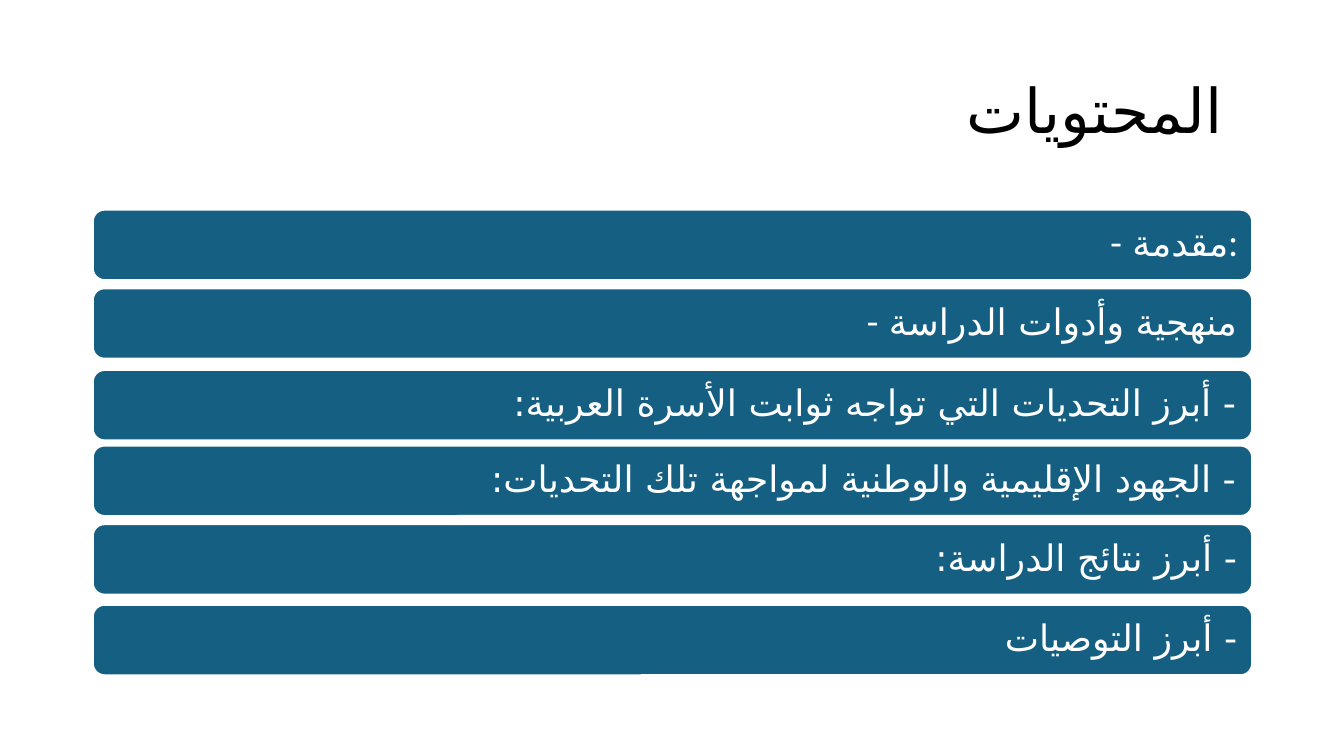
from pptx import Presentation
from pptx.dml.color import RGBColor
from pptx.enum.shapes import MSO_SHAPE
from pptx.enum.text import MSO_ANCHOR, PP_ALIGN
from pptx.oxml.ns import qn
from pptx.util import Inches, Pt
from lxml.etree import SubElement

FONT = "Lato"
ARABIC_FONT = "DejaVu Sans"  # Lato has no Arabic letters
LEFT, WIDTH = Inches(0.92), Inches(11.5)


def color(hex_code):
    return RGBColor.from_string(hex_code)


def write_line(shape, text, size, hex_code, rtl=False):
    """Fill the shape with one right-aligned line, set for Arabic script too."""
    frame = shape.text_frame
    frame.word_wrap = True
    frame.vertical_anchor = MSO_ANCHOR.MIDDLE
    paragraph = frame.paragraphs[0]
    paragraph.text = text
    paragraph.alignment = PP_ALIGN.RIGHT
    paragraph.line_spacing = 0.9
    if rtl:
        paragraph._p.get_or_add_pPr().set("rtl", "1")
    font = paragraph.runs[0].font
    font.size = Pt(size)
    font.name = FONT
    font.color.rgb = color(hex_code)
    SubElement(font._element, qn("a:cs")).set("typeface", ARABIC_FONT)


prs = Presentation()
prs.slide_width = Inches(13.33)
prs.slide_height = Inches(7.5)
slide = prs.slides.add_slide(prs.slide_layouts[6])

title = slide.shapes.add_textbox(LEFT, Inches(0.4), WIDTH, Inches(1.45))
write_line(title, "المحتويات ", 44, "000000")

# Top in inches, text, right-to-left paragraph
contents = [
    (2.08, "- مقدمة:", False),
    (2.86, "- منهجية وأدوات الدراسة", False),
    (3.67, "- أبرز التحديات التي تواجه ثوابت الأسرة العربية:", True),
    (4.42, "- الجهود الإقليمية والوطنية لمواجهة تلك التحديات:", True),
    (5.2, "- أبرز نتائج الدراسة:", True),
    (6, "- أبرز التوصيات ", True),
]
for top, text, rtl in contents:
    bar = slide.shapes.add_shape(
        MSO_SHAPE.ROUNDED_RECTANGLE, LEFT, Inches(top), WIDTH, Inches(0.7))
    bar.shadow.inherit = False
    bar.fill.solid()
    bar.fill.fore_color.rgb = color("156082")
    bar.line.color.rgb = color("FFFFFF")
    bar.line.width = Pt(1.5)
    # The rounded corners already inset the text by 0.03 in
    frame = bar.text_frame
    frame.margin_left = frame.margin_right = Inches(0.11)
    frame.margin_top = frame.margin_bottom = Inches(0.11)
    write_line(bar, text, 26, "FFFFFF", rtl)

prs.save("out.pptx")
